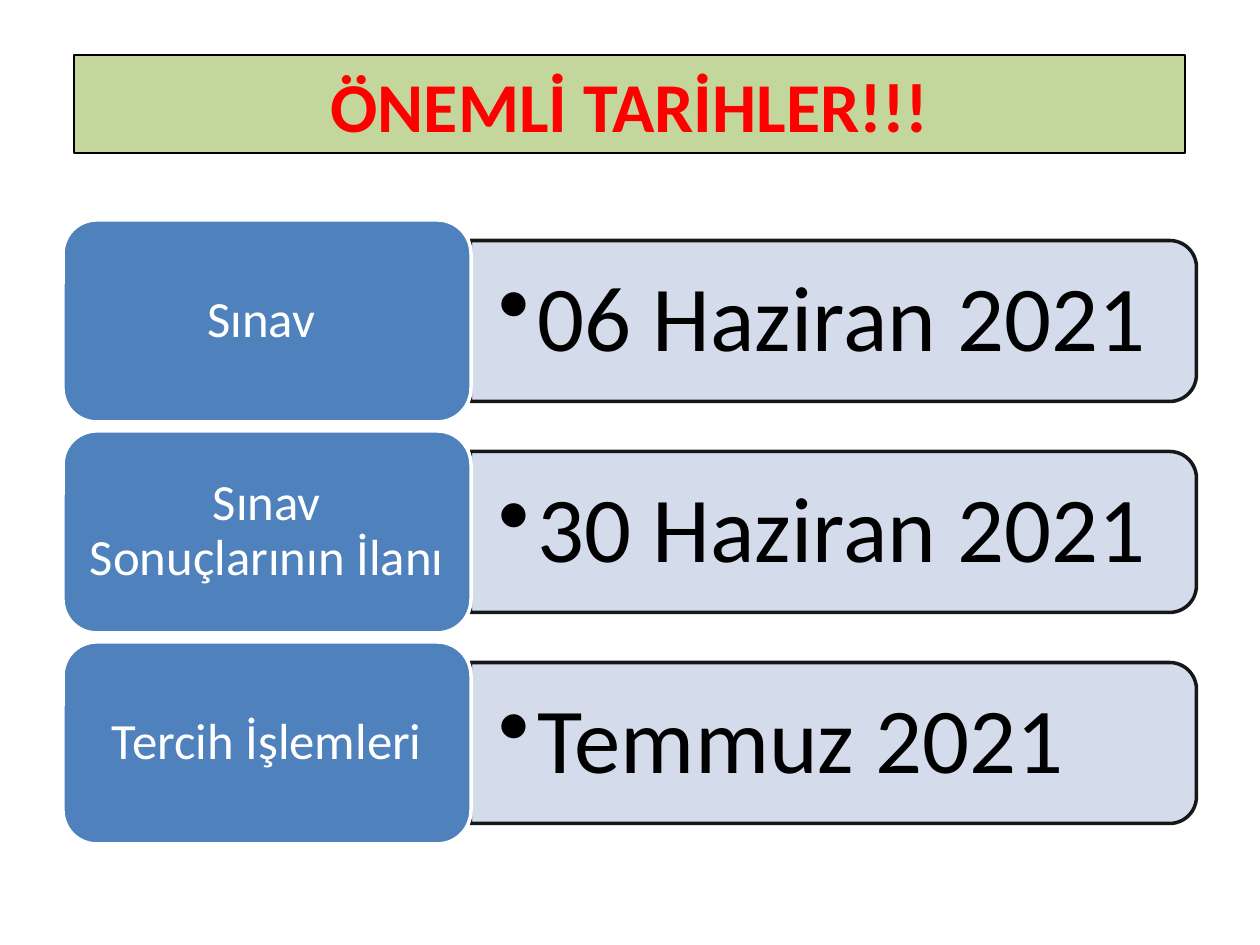
from lxml.etree import SubElement
from pptx import Presentation
from pptx.dml.color import RGBColor
from pptx.enum.shapes import MSO_SHAPE as Preset
from pptx.enum.text import MSO_ANCHOR as Anchor, PP_ALIGN as Align
from pptx.oxml.ns import qn
from pptx.util import Pt

PX = 914400 // 126
COLORS = {
    "title_fill": "C3D69B",
    "title": "FF0000",
    "label": "4F81BD",
    "bar": "D0D8E8",
    "black": "000000",
    "white": "FFFFFF",
}
ROWS = [
    ("Sınav ", "06 Haziran 2021"),
    ("Sınav Sonuçlarının İlanı", "30 Haziran 2021"),
    ("Tercih İşlemleri", "Temmuz 2021"),
]
LEFT, TOP, PITCH = 63, 220, 211
LABEL_WIDTH, LABEL_HEIGHT = 408, 202
BAR_LENGTH, BAR_HEIGHT = 726, 161
DATE_WIDTH, DATE_HEIGHT = 718, 145
BULLET_INDENT = 39


def add_box(preset, left, top, width, height, fill, line, line_width):
    shape = slide.shapes.add_shape(preset, left * PX, top * PX, width * PX, height * PX)
    shape.shadow.inherit = False
    shape.fill.solid()
    shape.fill.fore_color.rgb = RGBColor.from_string(COLORS[fill])
    shape.line.color.rgb = RGBColor.from_string(COLORS[line])
    shape.line.width = Pt(line_width)
    return shape


def write(shape, text, size, color, align, inset_x, inset_y):
    frame = shape.text_frame
    frame.text = text
    frame.word_wrap = True
    frame.vertical_anchor = Anchor.MIDDLE
    frame.margin_left = frame.margin_right = inset_x * PX
    frame.margin_top = frame.margin_bottom = inset_y * PX
    paragraph = frame.paragraphs[0]
    paragraph.alignment = align
    font = paragraph.runs[0].font
    font.name = "Calibri"
    font.size = Pt(size)
    font.color.rgb = RGBColor.from_string(COLORS[color])
    return paragraph


presentation = Presentation()
presentation.slide_width = 1260 * PX
presentation.slide_height = 945 * PX
slide = presentation.slides.add_slide(presentation.slide_layouts[6])

for row, (label, date) in enumerate(ROWS):
    top = TOP + row * PITCH
    middle = top + LABEL_HEIGHT // 2
    date_left = LEFT + LABEL_WIDTH

    bar = add_box(
        Preset.ROUND_2_SAME_RECTANGLE,
        date_left + (BAR_LENGTH - BAR_HEIGHT) // 2,
        middle - BAR_LENGTH // 2,
        BAR_HEIGHT, BAR_LENGTH, "bar", "black", 2,
    )
    bar.rotation = 90
    for color in bar._element.spPr.iter(qn("a:srgbClr")):
        SubElement(color, qn("a:alpha"), val="90000")

    date_box = slide.shapes.add_textbox(
        date_left * PX, (middle - DATE_HEIGHT // 2) * PX, DATE_WIDTH * PX, DATE_HEIGHT * PX
    )
    paragraph = write(date_box, date, 53, "black", Align.LEFT, 28, 14)
    paragraph.level = 1
    paragraph.line_spacing = 0.9
    properties = paragraph._p.get_or_add_pPr()
    properties.set("marL", str(BULLET_INDENT * PX))
    properties.set("indent", str(-BULLET_INDENT * PX))
    SubElement(properties, qn("a:buChar"), char="•")

    label_box = add_box(
        Preset.ROUNDED_RECTANGLE, LEFT, top, LABEL_WIDTH, LABEL_HEIGHT, "label", "white", 2
    )
    paragraph = write(label_box, label, 29, "white", Align.CENTER, 15, 8)
    paragraph.line_spacing = 0.9

title = add_box(Preset.RECTANGLE, 74, 55, 1111, 98, "title_fill", "black", 0.75)
paragraph = write(title, "ÖNEMLİ TARİHLER!!!", 40, "title", Align.CENTER, 13, 6)
paragraph.runs[0].font.bold = True

presentation.save("out.pptx")
